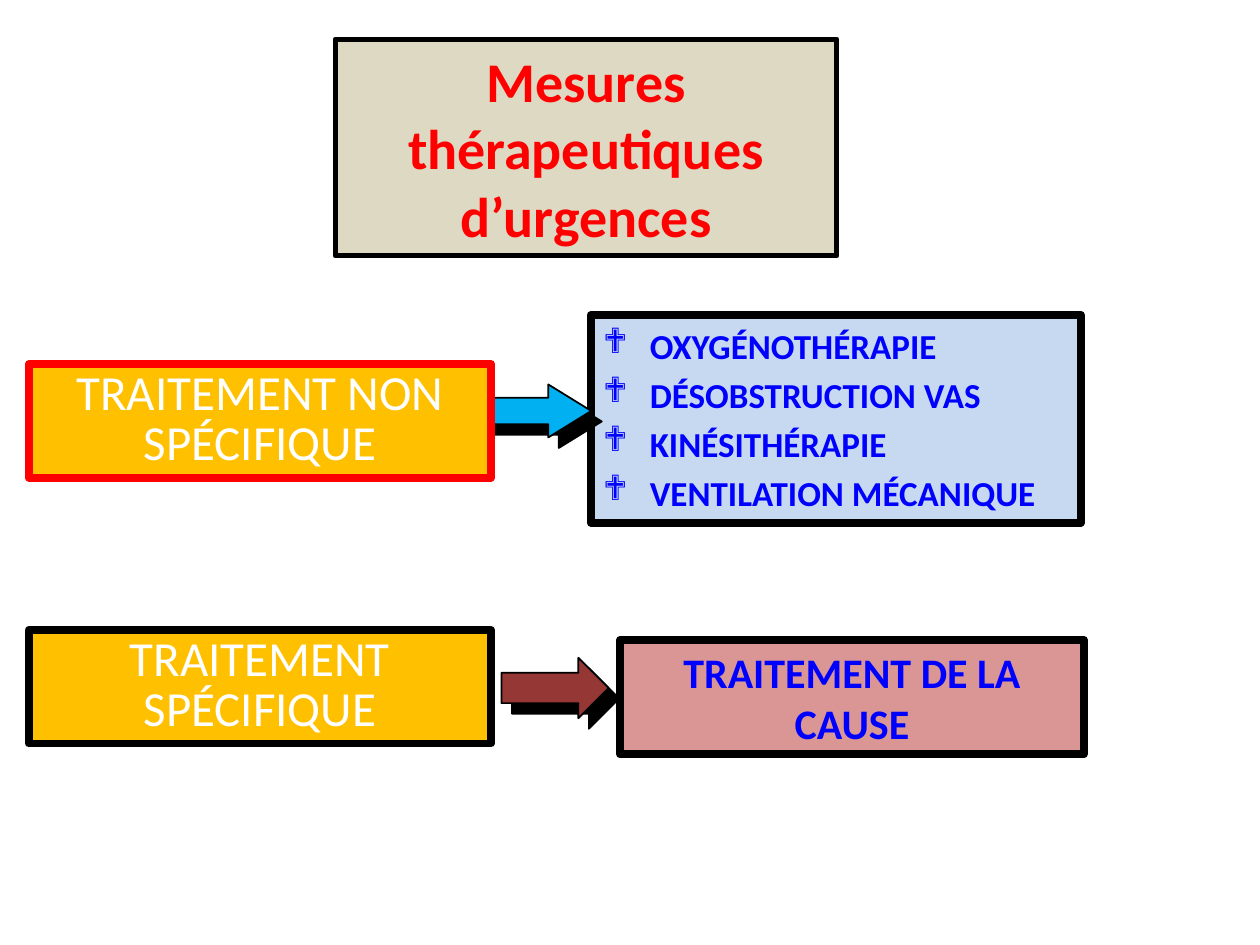
from lxml.etree import SubElement
from pptx import Presentation
from pptx.dml.color import RGBColor
from pptx.enum.shapes import MSO_SHAPE
from pptx.enum.text import MSO_ANCHOR, PP_ALIGN
from pptx.oxml.ns import qn
from pptx.util import Cm, Pt

BLACK = RGBColor(0x00, 0x00, 0x00)
WHITE = RGBColor(0xFF, 0xFF, 0xFF)
RED = RGBColor(0xFF, 0x00, 0x00)
BLUE = RGBColor(0x00, 0x00, 0xFF)
BEIGE = RGBColor(0xDD, 0xD9, 0xC3)
AMBER = RGBColor(0xFF, 0xC0, 0x00)
PALE_BLUE = RGBColor(0xC6, 0xD9, 0xF1)
ROSE = RGBColor(0xD9, 0x96, 0x94)
SKY = RGBColor(0x00, 0xB0, 0xF0)
MAROON = RGBColor(0x95, 0x37, 0x35)


def add_outlined(slide, kind, box, fill, line, line_width):
    """Add a filled and outlined preset shape; box is in centimetres."""
    shape = slide.shapes.add_shape(kind, *(Cm(length) for length in box))
    shape.shadow.inherit = False
    shape.fill.solid()
    shape.fill.fore_color.rgb = fill
    shape.line.color.rgb = line
    shape.line.width = Pt(line_width)
    return shape


def add_bullet(paragraph):
    """Give a paragraph a diamond bullet with a hanging indent."""
    properties = paragraph._p.get_or_add_pPr()
    properties.set("marL", str(Cm(0.94)))
    properties.set("indent", str(-Cm(0.94)))
    SubElement(properties, qn("a:buFont"), typeface="Wingdings")
    SubElement(properties, qn("a:buChar"), char="❖")


def add_panel(slide, box, lines, fill, color, size, line=BLACK, line_width=4.5,
              bold=True, bullets=False, line_spacing=None, gap=0):
    """Add a rectangle holding one paragraph for each line."""
    panel = add_outlined(slide, MSO_SHAPE.RECTANGLE, box, fill, line, line_width)
    frame = panel.text_frame
    frame.word_wrap = True
    frame.vertical_anchor = MSO_ANCHOR.MIDDLE
    for index, text in enumerate(lines):
        paragraph = frame.add_paragraph() if index else frame.paragraphs[0]
        paragraph.text = text
        paragraph.alignment = PP_ALIGN.LEFT if bullets else PP_ALIGN.CENTER
        paragraph.line_spacing = line_spacing
        if index:
            paragraph.space_before = Pt(gap)
        if bullets:
            add_bullet(paragraph)
        font = paragraph.font
        font.name, font.size, font.bold = "Calibri", Pt(size), bold
        font.color.rgb = color


def add_arrow(slide, box, fill, head):
    """Add a right arrow with a hard black shadow."""
    arrow = add_outlined(slide, MSO_SHAPE.RIGHT_ARROW, box, fill, BLACK, 1)
    arrow.adjustments[1] = head
    effects = arrow._element.spPr.find(qn("a:effectLst"))
    shadow = SubElement(effects, qn("a:outerShdw"), dist=str(Pt(8.5)),
                        dir="2700000", algn="ctr", rotWithShape="0")
    SubElement(shadow, qn("a:srgbClr"), val=str(BLACK))


def add_title(slide, box):
    """Add the title panel."""
    add_panel(slide, box, ["Mesures thérapeutiques d’urgences"], BEIGE, RED, 32,
              line_width=3)


def add_nonspecific_row(slide, left, top):
    """Add the non-specific treatment, its arrow and its list of measures."""
    measures = ["OXYGÉNOTHÉRAPIE", "DÉSOBSTRUCTION VAS", "KINÉSITHÉRAPIE",
                "VENTILATION MÉCANIQUE"]
    add_panel(slide, (left + 11.33, top, 9.88, 4.19), measures, PALE_BLUE, BLUE, 20,
              bullets=True, gap=4)
    add_arrow(slide, (left + 8.95, top + 1.4, 2.39, 1.07), SKY, 0.81)
    add_panel(slide, (left, top + 0.99, 9.32, 2.29), ["TRAITEMENT NON", "SPÉCIFIQUE"],
              AMBER, WHITE, 28, line=RED, bold=False, line_spacing=0.85)


def add_specific_row(slide, left, top):
    """Add the specific treatment, its arrow and its target."""
    add_panel(slide, (left + 11.92, top + 0.2, 9.35, 2.31), ["TRAITEMENT DE LA CAUSE"],
              ROSE, BLUE, 24)
    add_arrow(slide, (left + 9.53, top + 0.56, 2.16, 1.22), MAROON, 0.5)
    add_panel(slide, (left, top, 9.32, 2.29), ["TRAITEMENT SPÉCIFIQUE"],
              AMBER, WHITE, 28, bold=False, line_spacing=0.85)


def main():
    """Build the slide and save it."""
    presentation = Presentation()
    presentation.slide_width, presentation.slide_height = Cm(25.4), Cm(19.05)
    slide = presentation.slides.add_slide(presentation.slide_layouts[6])
    add_nonspecific_row(slide, 0.58, 6.35)
    add_specific_row(slide, 0.58, 12.7)
    add_title(slide, (6.76, 0.79, 10.11, 4.37))
    presentation.save("out.pptx")


if __name__ == "__main__":
    main()
